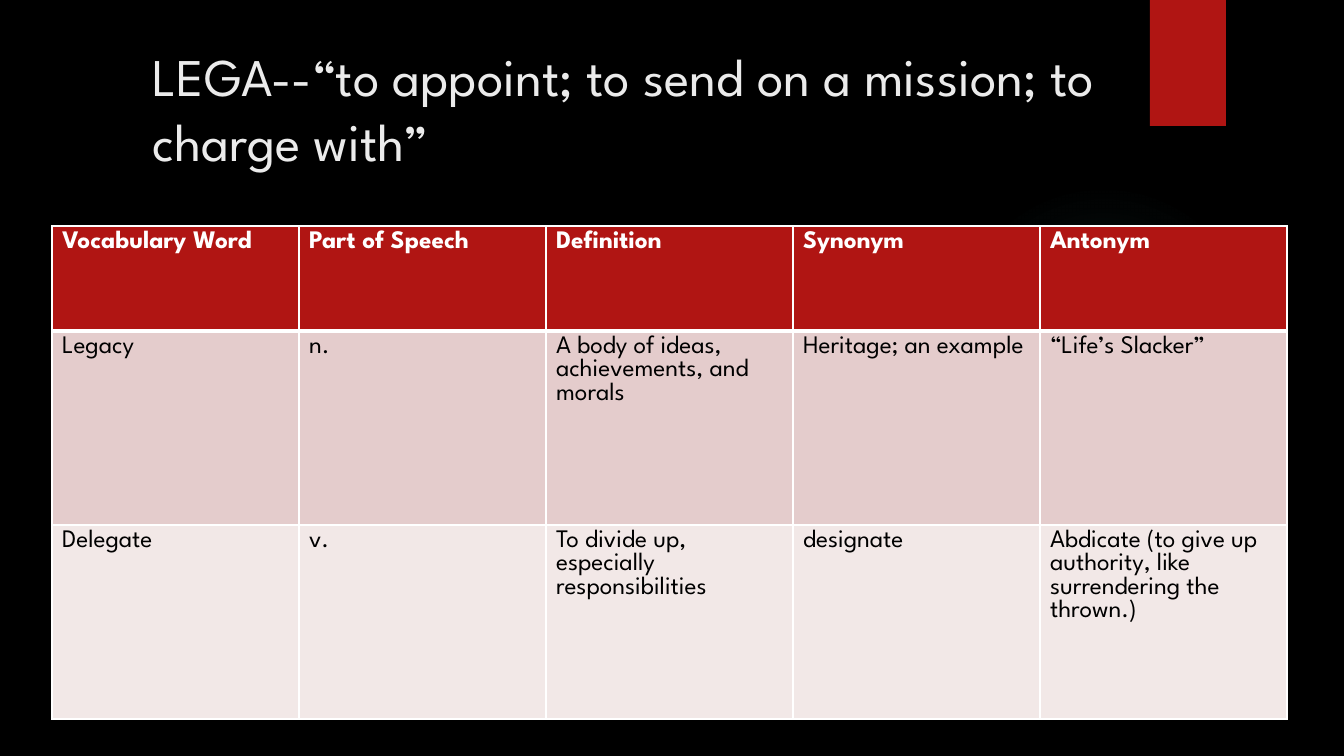
from lxml import etree
from pptx import Presentation
from pptx import util as u
from pptx.dml.color import RGBColor
from pptx.enum import shapes, text
from pptx.oxml import ns

PX = 12192000 / 1344
FONT = "League Spartan"
BLACK = RGBColor(0x00, 0x00, 0x00)
WHITE = RGBColor(0xFF, 0xFF, 0xFF)
TITLE_GREY = RGBColor(0xEB, 0xEB, 0xEB)
RED = RGBColor(0xB0, 0x15, 0x13)
ROSE = RGBColor(0xE4, 0xCC, 0xCC)
PALE_ROSE = RGBColor(0xF2, 0xE8, 0xE7)
TEAL = RGBColor(0x50, 0xB9, 0xC1)

ROWS = [
    ["Vocabulary Word", "Part of Speech", "Definition", "Synonym", "Antonym"],
    ["Legacy", "n.", "A body of ideas, achievements, and morals",
     "Heritage; an example", "“Life’s Slacker”"],
    ["Delegate", "v.", "To divide up, especially responsibilities", "designate",
     "Abdicate (to give up authority, like surrendering the thrown.)"],
]
ROW_HEIGHTS = [105, 194, 194]
ROW_FILLS = [RED, ROSE, PALE_ROSE]
COLUMN_WIDTH = 247


def px(*lengths):
    return [u.Emu(round(length * PX)) for length in lengths]


def add_child(parent, tag, **attributes):
    return etree.SubElement(parent, ns.qn(tag), attributes)


def write(frame, content, size, color, bold=False, line_spacing=None):
    paragraph = frame.paragraphs[0]
    if line_spacing:
        paragraph.line_spacing = line_spacing
    run = paragraph.add_run()
    run.text = content
    run.font.name = FONT
    run.font.size = u.Pt(size)
    run.font.bold = bold
    run.font.color.rgb = color


def add_plain_shape(slide, kind, box, color):
    shape = slide.shapes.add_shape(kind, *px(*box))
    shape.shadow.inherit = False
    shape.line.fill.background()
    shape.fill.solid()
    shape.fill.fore_color.rgb = color
    return shape


def add_glow(slide, box, color, stops):
    shape = add_plain_shape(slide, shapes.MSO_SHAPE.OVAL, box, color)
    properties = shape.element.spPr
    solid = properties.find(ns.qn("a:solidFill"))
    gradient = etree.Element(ns.qn("a:gradFill"), rotWithShape="1")
    stop_list = add_child(gradient, "a:gsLst")
    for position, opacity in stops:
        stop = add_child(stop_list, "a:gs", pos=str(position * 1000))
        tint = add_child(stop, "a:srgbClr", val=str(color))
        add_child(tint, "a:alpha", val=str(opacity * 1000))
    center = add_child(gradient, "a:path", path="circle")
    add_child(center, "a:fillToRect", l="50000", t="50000", r="50000", b="50000")
    properties.replace(solid, gradient)


def add_title(slide, box, content):
    frame = slide.shapes.add_textbox(*px(*box)).text_frame
    frame.word_wrap = True
    frame.vertical_anchor = text.MSO_ANCHOR.TOP
    write(frame, content, 37.8, TITLE_GREY, line_spacing=u.Pt(46.4))


def set_borders(cell, color, widths):
    properties = cell._tc.get_or_add_tcPr()
    for index, (side, width) in enumerate(widths.items()):
        line = etree.Element(ns.qn(f"a:ln{side}"), w=str(u.Pt(width)))
        fill = add_child(line, "a:solidFill")
        add_child(fill, "a:srgbClr", val=str(color))
        properties.insert(index, line)


def add_vocabulary_table(slide, left, top):
    columns = len(ROWS[0])
    size = px(left, top, columns * COLUMN_WIDTH, sum(ROW_HEIGHTS))
    table = slide.shapes.add_table(len(ROWS), columns, *size).table
    for column in table.columns:
        column.width = px(COLUMN_WIDTH)[0]
    for index, words in enumerate(ROWS):
        header = index == 0
        table.rows[index].height = px(ROW_HEIGHTS[index])[0]
        widths = {"L": 1, "R": 1, "T": 3 if index == 1 else 1, "B": 3 if header else 1}
        for cell, word in zip(table.rows[index].cells, words):
            cell.fill.solid()
            cell.fill.fore_color.rgb = ROW_FILLS[index]
            set_borders(cell, WHITE, widths)
            write(cell.text_frame, word, 18, WHITE if header else BLACK, bold=header)


def main():
    presentation = Presentation()
    presentation.slide_width, presentation.slide_height = px(1344, 756)
    slide = presentation.slides.add_slide(presentation.slide_layouts[6])
    slide.background.fill.solid()
    slide.background.fill.fore_color.rgb = BLACK
    add_glow(slide, (949, 184, 310, 310), TEAL, [(0, 7), (36, 6), (69, 0)])
    add_plain_shape(slide, shapes.MSO_SHAPE.RECTANGLE, (1150, 0, 76, 126), RED)
    add_title(slide, (143, 37, 1058, 181),
              "LEGA--“to appoint; to send on a mission; to charge with”")
    add_vocabulary_table(slide, 52, 226)
    presentation.save("out.pptx")


if __name__ == "__main__":
    main()
